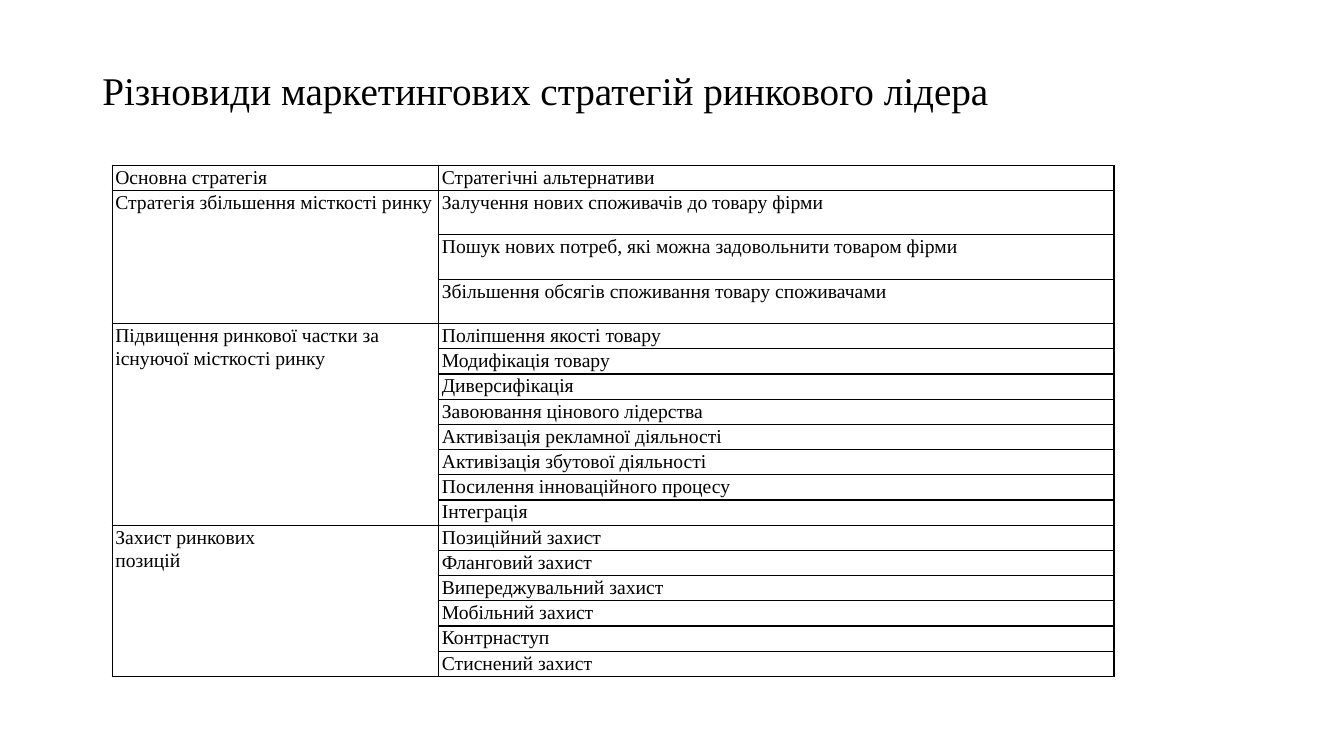
import pptx
import pptx.util
import pptx.dml.color
import pptx.enum.text
import pptx.oxml

Pt = pptx.util.Pt
BLACK = pptx.dml.color.RGBColor(0, 0, 0)
FACE = "Times New Roman"
TITLE = "Різновиди маркетингових стратегій ринкового лідера"
HEADS = ("Основна стратегія", "Стратегічні альтернативи")
LOW, TALL = 15.1, 31.7
GROUPS = [
    ("Стратегія збільшення місткості ринку", TALL, [
        "Залучення нових споживачів до товару фірми",
        "Пошук нових потреб, які можна задовольнити товаром фірми",
        "Збільшення обсягів споживання товару споживачами",
    ]),
    ("Підвищення ринкової частки за\nіснуючої місткості ринку", LOW, [
        "Поліпшення якості товару",
        "Модифікація товару",
        "Диверсифікація",
        "Завоювання цінового лідерства",
        "Активізація рекламної діяльності",
        "Активізація збутової діяльності",
        "Посилення інноваційного процесу",
        "Інтеграція",
    ]),
    ("Захист ринкових\nпозицій", LOW, [
        "Позиційний захист",
        "Фланговий захист",
        "Випереджувальний захист",
        "Мобільний захист",
        "Контрнаступ",
        "Стиснений захист",
    ]),
]


def style(frame, size, space, align):
    for para in frame.paragraphs:
        para.alignment = align
        para.line_spacing = space
        para.font.name = FACE
        para.font.size = Pt(size)
        para.font.color.rgb = BLACK


def border(cell):
    props = cell._tc.get_or_add_tcPr()
    for index, side in enumerate(("lnL", "lnR", "lnT", "lnB")):
        props.insert(index, pptx.oxml.parse_xml(
            f'<a:{side} xmlns:a="http://schemas.openxmlformats.org/drawingml/2006/main" '
            f'w="{Pt(1)}"><a:solidFill><a:srgbClr val="{BLACK}"/></a:solidFill></a:{side}>'))


def fill_cell(cell, text):
    cell.text = text
    cell.margin_left = cell.margin_right = Pt(2.2)
    cell.margin_top = cell.margin_bottom = 0
    style(cell.text_frame, 14, 1.07, pptx.enum.text.PP_ALIGN.JUSTIFY)


def add_title(slide, left, top, width, height):
    box = slide.shapes.add_textbox(Pt(left), Pt(top), Pt(width), Pt(height))
    frame = box.text_frame
    frame.word_wrap = True
    frame.vertical_anchor = pptx.enum.text.MSO_ANCHOR.MIDDLE
    frame.text = TITLE
    style(frame, 28, 0.9, pptx.enum.text.PP_ALIGN.LEFT)


def add_grid(slide, left, top, width, height):
    count = 1 + sum(len(items) for _, _, items in GROUPS)
    shape = slide.shapes.add_table(count, 2, Pt(left), Pt(top), Pt(width), Pt(height))
    table = shape.table
    table.first_row = table.horz_banding = False
    for column, share in zip(table.columns, (0.326, 0.674)):
        column.width = Pt(width * share)
    for row in table.rows:
        row.height = Pt(LOW)
        for cell in row.cells:
            cell.fill.background()
            border(cell)
    for column, head in enumerate(HEADS):
        fill_cell(table.cell(0, column), head)
    start = 1
    for name, tall, items in GROUPS:
        for row, item in enumerate(items, start):
            table.rows[row].height = Pt(tall)
            fill_cell(table.cell(row, 1), item)
        last = start + len(items) - 1
        table.cell(start, 0).merge(table.cell(last, 0))
        fill_cell(table.cell(start, 0), name)
        start = last + 1


def main():
    deck = pptx.Presentation()
    deck.slide_width, deck.slide_height = Pt(960), Pt(540)
    slide = deck.slides.add_slide(deck.slide_layouts[6])
    add_title(slide, 66, 28.8, 828, 75)
    add_grid(slide, 80.2, 118, 715.5, 364)
    deck.save("out.pptx")


if __name__ == "__main__":
    main()
